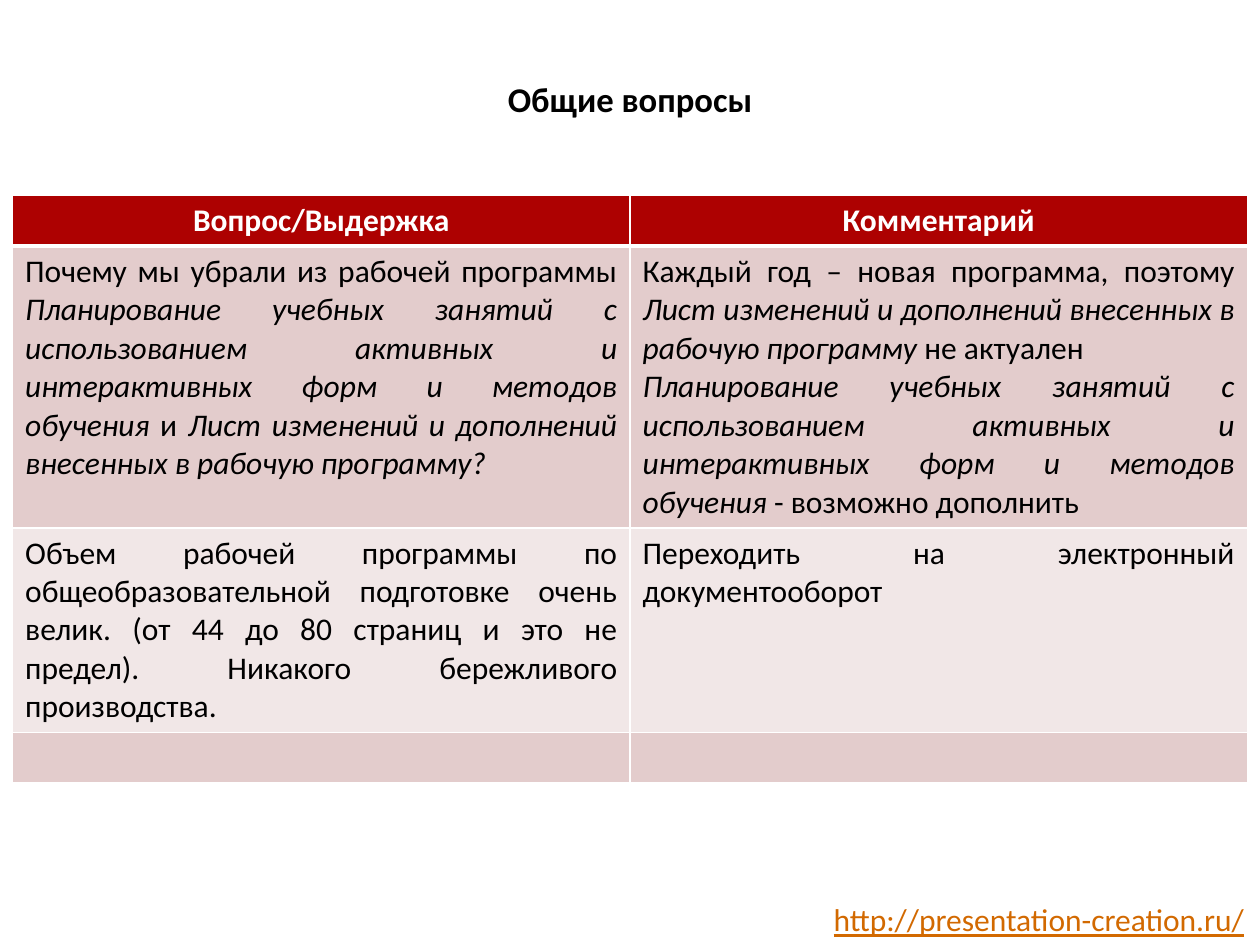
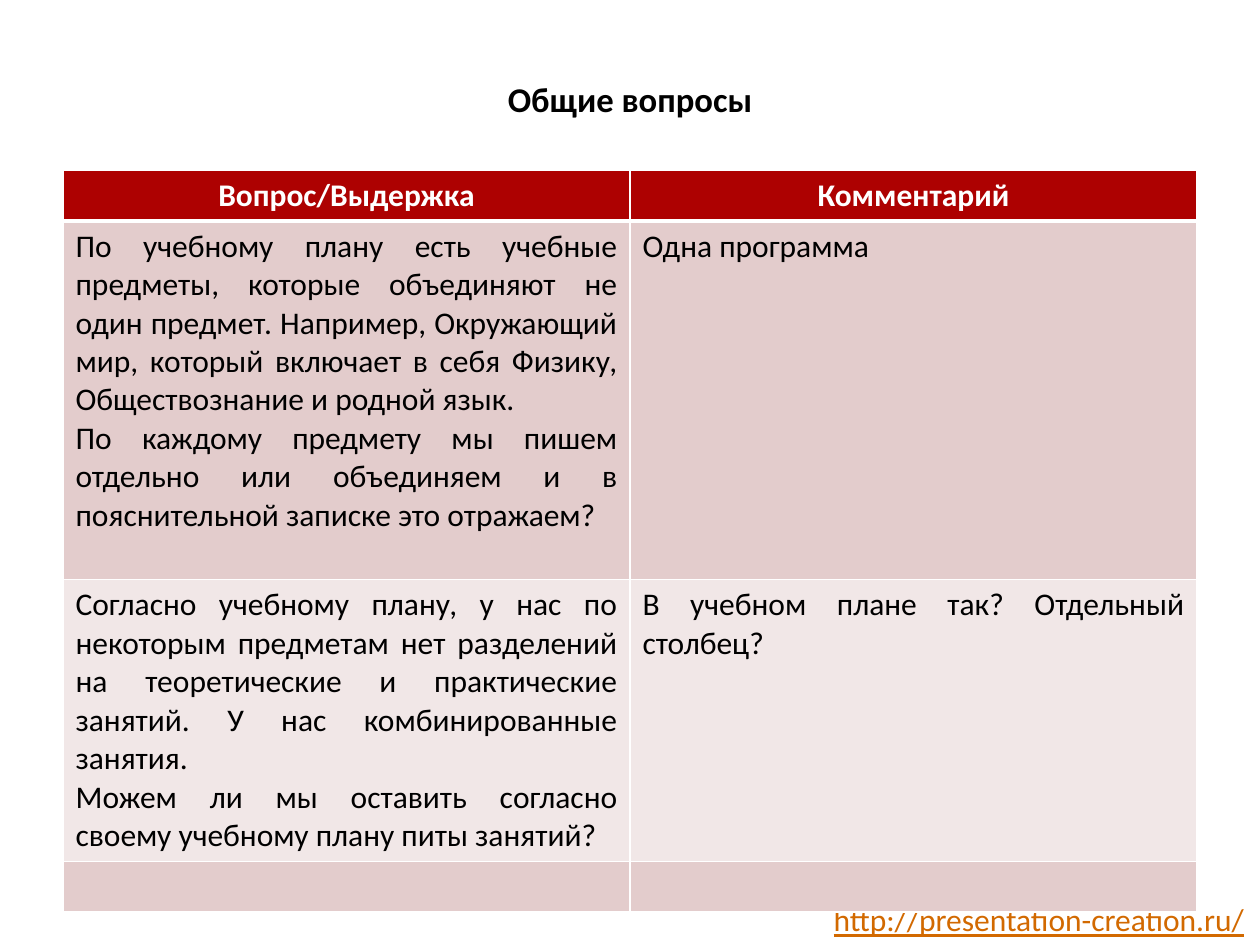
from lxml import etree
from pptx import Presentation
from pptx.dml.color import RGBColor
from pptx.enum.text import MSO_ANCHOR, MSO_AUTO_SIZE, PP_ALIGN
from pptx.oxml.ns import qn
from pptx.util import Pt

CENTER, JUSTIFY = PP_ALIGN.CENTER, PP_ALIGN.JUSTIFY
MIDDLE = MSO_ANCHOR.MIDDLE
FIT_SHAPE, FIT_NONE = MSO_AUTO_SIZE.SHAPE_TO_FIT_TEXT, MSO_AUTO_SIZE.NONE
TITLE_ONLY = 5

FONT = "Calibri"
BLACK, WHITE = "000000", "FFFFFF"
RED, LINK = "AD0101", "D26900"
BANDS = ("E3CCCC", "F1E7E7")

TITLE = "Общие вопросы"
FOOTER = "http://presentation-creation.ru/"
HEADER = (["Вопрос/Выдержка"], ["Комментарий"])
EMPTY_ROW = ([], [])

PROGRAM_ROWS = [
    (
        ["Почему мы убрали из рабочей программы *Планирование учебных занятий "
         "с использованием активных и интерактивных форм и методов обучения* и "
         "*Лист изменений и дополнений внесенных в рабочую программу?*"],
        ["Каждый год – новая программа, поэтому *Лист изменений и дополнений "
         "внесенных в рабочую программу *не актуален",
         "*Планирование учебных занятий с использованием активных и "
         "интерактивных форм и методов обучения* - возможно дополнить"],
    ),
    (
        ["Объем рабочей программы по общеобразовательной подготовке очень "
         "велик. (от 44 до 80 страниц и это не предел). Никакого бережливого "
         "производства."],
        ["Переходить на электронный документооборот"],
    ),
    EMPTY_ROW,
]

SUBJECT_ROWS = [
    (
        ["По учебному плану есть учебные предметы, которые объединяют не один "
         "предмет. Например, Окружающий мир, который включает в себя Физику, "
         "Обществознание и родной язык.",
         "По каждому предмету мы пишем отдельно или объединяем и в "
         "пояснительной записке это отражаем?"],
        ["Одна программа"],
    ),
    (
        ["Согласно учебному плану, у нас по некоторым предметам нет разделений "
         "на теоретические и практические занятий. У нас комбинированные "
         "занятия.",
         "Можем ли мы оставить согласно своему учебному плану питы занятий?"],
        ["В учебном плане так? Отдельный столбец?"],
    ),
    EMPTY_ROW,
]


def rgb(value):
    """Turn a hex string into a colour."""
    return RGBColor.from_string(value)


def write(frame, paragraphs, size=18, color=BLACK, bold=False,
          underline=False, align=JUSTIFY):
    """Fill a text frame; asterisks in a paragraph switch italics."""
    for index, text in enumerate(paragraphs):
        para = frame.add_paragraph() if index else frame.paragraphs[0]
        para.alignment = align
        for part, words in enumerate(text.split("*")):
            if not words:
                continue
            span = para.add_run()
            span.text = words
            font = span.font
            font.name, font.size = FONT, Pt(size)
            font.bold, font.italic = bold, part % 2 == 1
            font.underline = underline
            font.color.rgb = rgb(color)


def add_title(page, text):
    """Place the slide title in its placeholder."""
    title = page.shapes.title
    title.left, title.top = Pt(36), Pt(21.6)
    title.width, title.height = Pt(648), Pt(90)
    frame = title.text_frame
    frame.vertical_anchor = MIDDLE
    frame.auto_size = FIT_NONE
    frame.margin_bottom = Pt(24)
    write(frame, [text], size=19.8, bold=True, align=CENTER)


def add_footer(page, text):
    """Place the web address at the bottom right."""
    box = page.shapes.add_textbox(Pt(467.3), Pt(511), Pt(252.7), Pt(29))
    frame = box.text_frame
    frame.word_wrap = False
    frame.auto_size = FIT_SHAPE
    write(frame, [text], color=LINK, underline=True, align=CENTER)


def set_borders(cell, top, bottom):
    """Draw white cell borders, with top and bottom widths in points."""
    properties = cell._tc.get_or_add_tcPr()
    for side, width in (("L", 1), ("R", 1), ("T", top), ("B", bottom)):
        line = etree.SubElement(properties, qn(f"a:ln{side}"), w=str(Pt(width)))
        fill = etree.SubElement(line, qn("a:solidFill"))
        etree.SubElement(fill, qn("a:srgbClr"), val=WHITE)


def add_questions(page, left, top, width, heights, rows):
    """Add a two-column table of questions and comments."""
    rows = [HEADER, *rows]
    table = page.shapes.add_table(
        len(rows), len(HEADER), Pt(left), Pt(top), Pt(width), Pt(sum(heights))
    ).table
    for column in table.columns:
        column.width = Pt(width / len(HEADER))
    for number, (height, row) in enumerate(zip(heights, rows)):
        table.rows[number].height = Pt(height)
        header = number == 0
        for column, paragraphs in enumerate(row):
            cell = table.cell(number, column)
            set_borders(cell, top=3 if number == 1 else 1,
                        bottom=3 if header else 1)
            cell.fill.solid()
            cell.fill.fore_color.rgb = rgb(RED if header else BANDS[(number - 1) % 2])
            write(cell.text_frame, paragraphs, bold=header,
                  color=WHITE if header else BLACK,
                  align=CENTER if header else JUSTIFY)


def add_page(deck, **table):
    """Add a slide with the shared title and footer and its own table."""
    page = deck.slides.add_slide(deck.slide_layouts[TITLE_ONLY])
    add_title(page, TITLE)
    add_footer(page, FOOTER)
    add_questions(page, **table)


def main():
    """Build the deck and save it."""
    deck = Presentation()
    deck.slide_width, deck.slide_height = Pt(720), Pt(540)
    add_page(deck, left=7.2, top=111.6, width=705.6,
             heights=(29, 161, 117, 29), rows=PROGRAM_ROWS)
    add_page(deck, left=36, top=97.2, width=648,
             heights=(29, 205, 161, 29), rows=SUBJECT_ROWS)
    deck.save("out.pptx")


if __name__ == "__main__":
    main()
